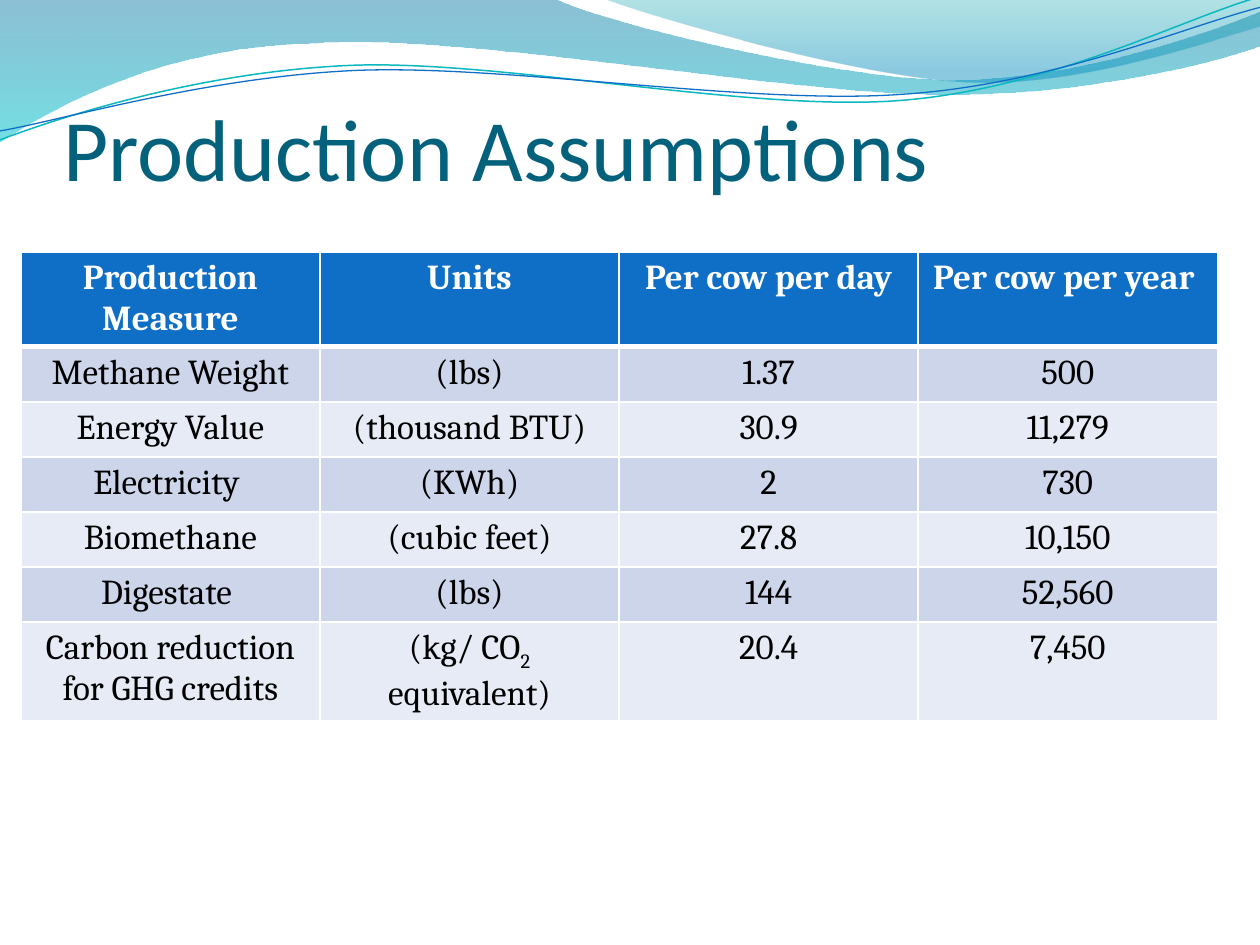
from lxml.etree import SubElement
from pptx import Presentation
from pptx.dml.color import RGBColor
from pptx.enum.text import MSO_ANCHOR, MSO_AUTO_SIZE, PP_ALIGN
from pptx.oxml.ns import qn
from pptx.util import Cm, Pt

# Content
TITLE = "Production Assumptions"
HEADER = ["Production Measure", "Units", "Per cow per day", "Per cow per year "]
ROWS = [
    ["Methane Weight", "(lbs)", "1.37", "500"],
    ["Energy Value", "(thousand BTU)", "30.9", "11,279"],
    ["Electricity ", "(KWh)", "2", "730"],
    ["Biomethane", "(cubic feet)", "27.8", "10,150"],
    ["Digestate ", "(lbs)", "144", "52,560"],
    ["Carbon reduction for GHG credits", ("(kg/ CO", "2 ", "equivalent)"), "20.4", "7,450"],
]
SUBSCRIPT = "2 "

# Waves in cm: a pair is a point, six numbers are a Bezier curve
BANDS = [
    ([(0, 0), (11.18, -0.03),
      (12.09, 0.43, 16.87, 1.6, 19.25, 1.6), (21.67, 1.6, 24.33, 0.66, 25.4, 0.23),
      (25.43, 0.91),
      (24.97, 1.12, 22.1, 1.93, 18.95, 1.9), (15.8, 1.9, 9.7, 0.71, 6.53, 0.86),
      (3.28, 0.91, 1.17, 2.11, -0.03, 2.87), (0, 0)],
     [(0, "0074A1", 45), (1, "00C6CF", 55)]),
    ([(12.17, -0.03),
      (12.93, 0.28, 17.32, 1.57, 19.53, 1.65), (21.74, 1.75, 24.41, 0.81, 25.4, 0.53),
      (25.4, 0), (12.17, -0.03)],
     [(0, "00A1A9", 30), (0.8, "008BBF", 45)]),
]
STRANDS = [
    ([(0, 2.82), (1.22, 2.36, 4.01, 1.45, 7.04, 1.32),
      (10.03, 1.19, 15.06, 2.26, 18.11, 2.03), (21.16, 1.8, 23.83, 0.38, 25.35, -0.05)],
     "0AB8BF", 0.85),
    ([(0, 2.64), (1.19, 2.44, 4.17, 1.55, 7.19, 1.42),
      (10.24, 1.3, 15.16, 2.13, 18.21, 1.9), (21.23, 1.7, 23.9, 0.53, 25.4, 0.15)],
     "0F6FC6", 0.75),
]


def color(hex_value):
    return RGBColor.from_string(hex_value)


def add_wave(slide, outline, close):
    """Draw the points as lines, then join each three of a curve into a Bezier."""
    points = [(Cm(part[i]), Cm(part[i + 1]))
              for part in outline for i in range(0, len(part), 2)]
    builder = slide.shapes.build_freeform(*points[0])
    builder.add_line_segments(points[1:], close=close)
    shape = builder.convert_to_shape()
    shape.shadow.inherit = False
    segments = iter(list(shape.element.iter(qn("a:lnTo"))))
    for part in outline[1:]:
        segment = next(segments)
        if len(part) == 6:
            segment.tag = qn("a:cubicBezTo")
            for _ in range(2):
                extra = next(segments)
                segment.append(extra[0])
                extra.getparent().remove(extra)
    return shape


def add_band(slide, outline, stops):
    shape = add_wave(slide, outline, True)
    shape.line.fill.background()
    shape.fill.gradient()
    shape.fill.gradient_angle = 270
    for stop, (position, hex_value, _) in zip(shape.fill.gradient_stops, stops):
        stop.position = position
        stop.color.rgb = color(hex_value)
    for node, (_, _, opacity) in zip(shape.element.iter(qn("a:srgbClr")), stops):
        SubElement(node, qn("a:alpha"), val=str(opacity * 1000))


def add_strand(slide, outline, hex_value, width):
    shape = add_wave(slide, outline, False)
    shape.fill.background()
    shape.line.color.rgb = color(hex_value)
    shape.line.width = Pt(width)


def set_borders(cell, bottom):
    properties = cell._tc.get_or_add_tcPr()
    for side, width in (("L", 1), ("R", 1), ("T", 1), ("B", bottom)):
        line = SubElement(properties, qn(f"a:ln{side}"), w=str(Pt(width)))
        fill = SubElement(line, qn("a:solidFill"))
        SubElement(fill, qn("a:srgbClr"), val="FFFFFF")


def fill_cell(cell, content, fill, text_color, bold, bottom):
    set_borders(cell, bottom)
    cell.fill.solid()
    cell.fill.fore_color.rgb = color(fill)
    paragraph = cell.text_frame.paragraphs[0]
    paragraph.alignment = PP_ALIGN.CENTER
    font = paragraph.font
    font.name, font.size, font.bold = "Cambria", Pt(20), bold
    font.color.rgb = color(text_color)
    for text in [content] if isinstance(content, str) else content:
        run = paragraph.add_run()
        run.text = text
        if text == SUBSCRIPT:
            run._r.get_or_add_rPr().set("baseline", "-25000")


def add_table(slide):
    rows = [HEADER] + ROWS
    heights = [1.91] + [1.11] * (len(ROWS) - 1) + [1.91]
    table = slide.shapes.add_table(
        len(rows), len(HEADER), Cm(0.42), Cm(5.08),
        Cm(6.03 * len(HEADER)), Cm(sum(heights))).table
    for column in table.columns:
        column.width = Cm(6.03)
    for index, (contents, height) in enumerate(zip(rows, heights)):
        table.rows[index].height = Cm(height)
        if index == 0:
            style = ("0F6FC6", "FFFFFF", True, 3)
        else:
            style = ("CCD5EA" if index % 2 else "E7EBF5", "000000", False, 1)
        for cell, content in zip(table.rows[index].cells, contents):
            fill_cell(cell, content, *style)


def set_title(slide):
    title = slide.shapes.title
    title.left, title.top, title.width, title.height = Cm(1.27), Cm(0.84), Cm(22.86), Cm(3.18)
    frame = title.text_frame
    frame.text = TITLE
    frame.auto_size = MSO_AUTO_SIZE.NONE
    frame.vertical_anchor = MSO_ANCHOR.BOTTOM
    frame.margin_left = frame.margin_right = frame.margin_bottom = 0
    frame.margin_top = Cm(0.13)
    paragraph = frame.paragraphs[0]
    paragraph.alignment = PP_ALIGN.LEFT
    paragraph.font.name, paragraph.font.size = "Calibri", Pt(50)
    paragraph.font.color.rgb = color("04617B")
    # Bring the title in front of the waves
    title.element.getparent().append(title.element)


def main():
    presentation = Presentation()
    presentation.slide_width, presentation.slide_height = Cm(25.4), Cm(19.05)
    slide = presentation.slides.add_slide(presentation.slide_layouts[5])
    for band in BANDS:
        add_band(slide, *band)
    for strand in STRANDS:
        add_strand(slide, *strand)
    set_title(slide)
    add_table(slide)
    presentation.save("out.pptx")


if __name__ == "__main__":
    main()
